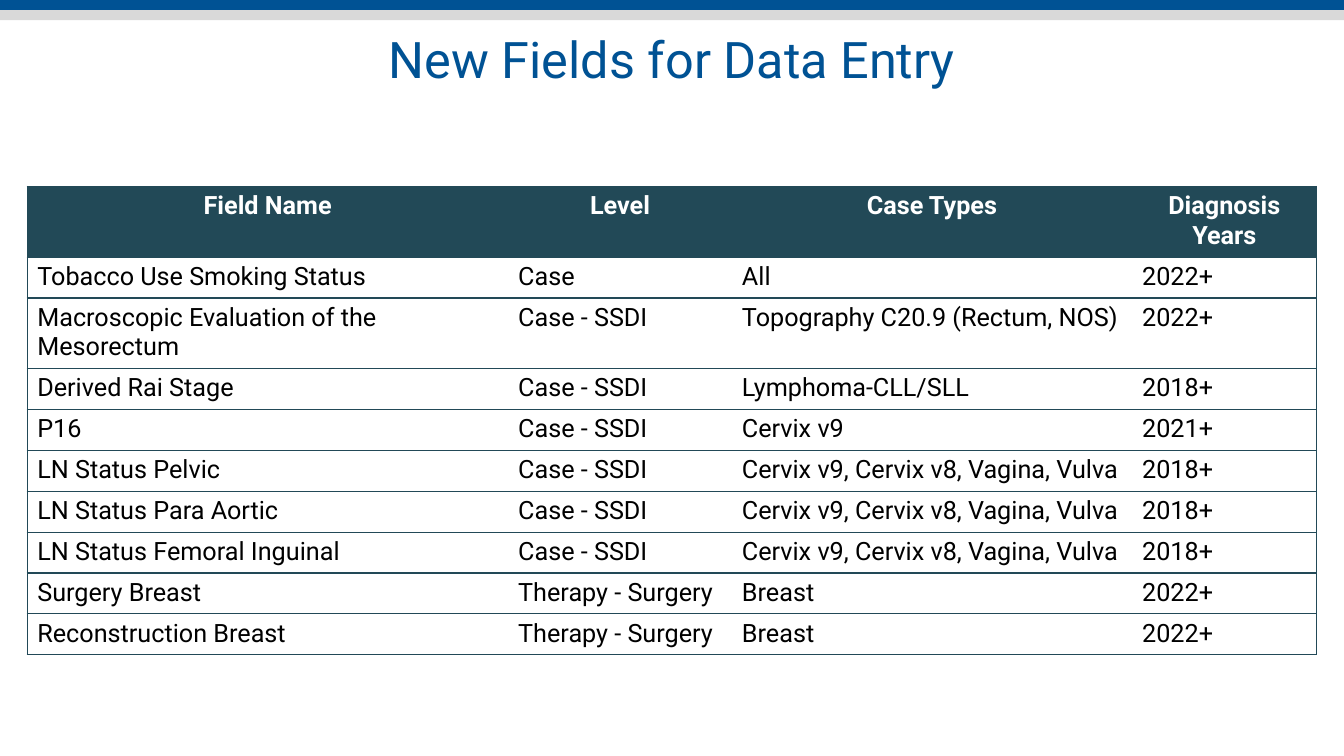
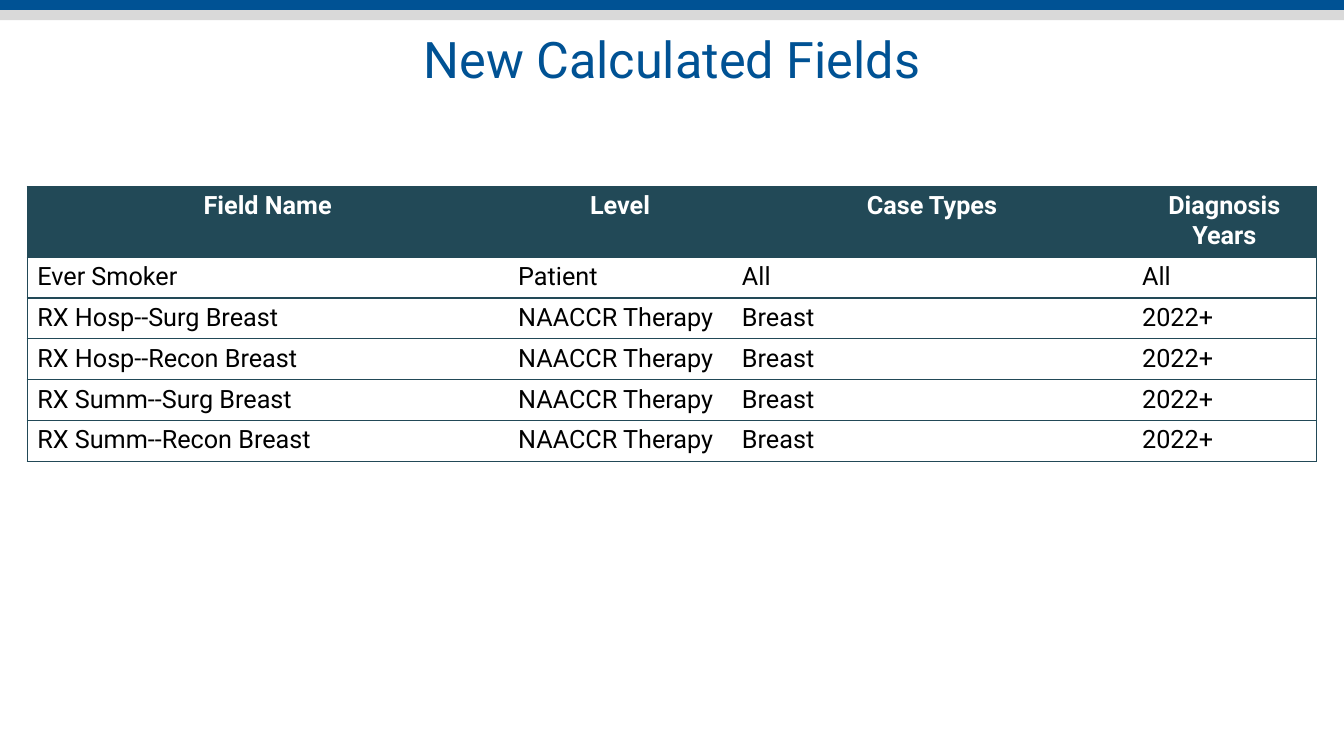
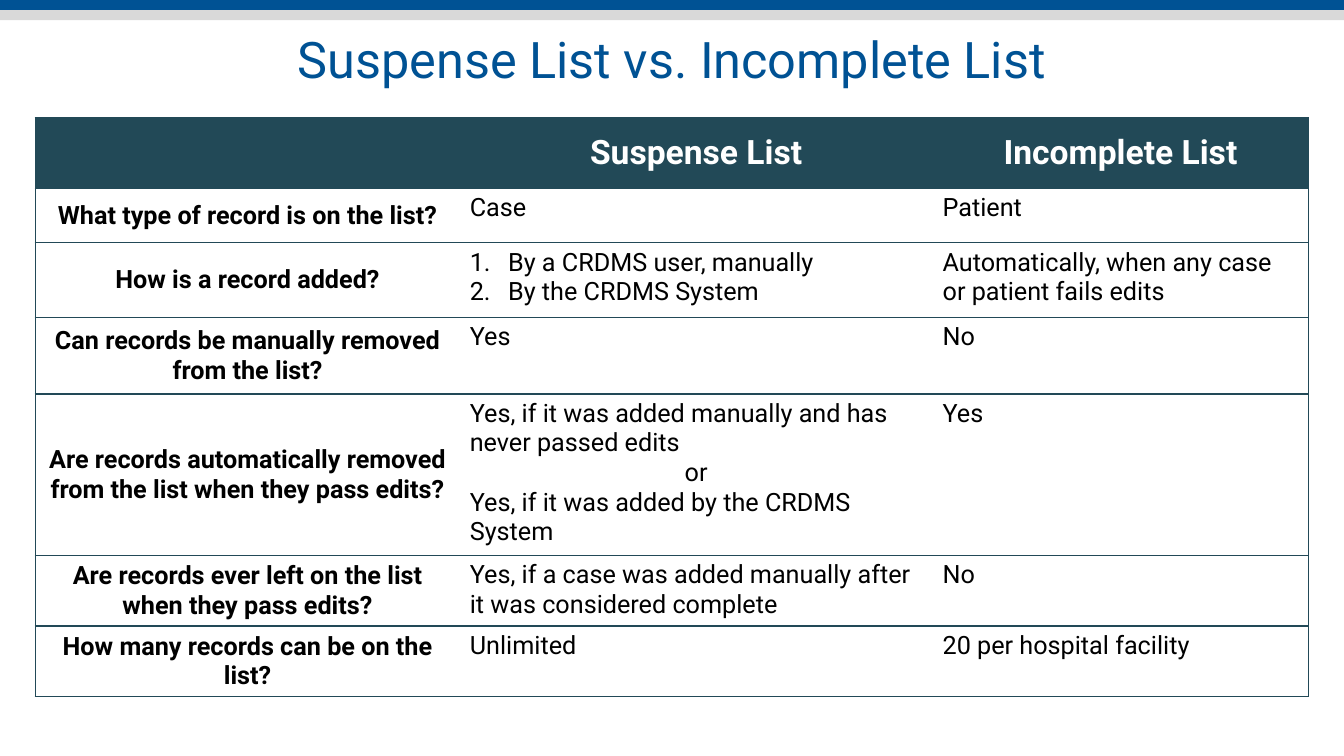
"""Build three slides of tables on new registry fields and record lists."""
import lxml.etree
import pptx
import pptx.dml.color
import pptx.enum.shapes
import pptx.enum.text
import pptx.oxml.ns
import pptx.util

COLORS = {
    "blue": "005294",
    "grey": "D9D9D9",
    "teal": "224957",
    "white": "FFFFFF",
    "black": "000000",
}
FONT = "Roboto"
CENTER = pptx.enum.text.PP_ALIGN.CENTER
LEFT = pptx.enum.text.PP_ALIGN.LEFT
TOP = pptx.enum.text.MSO_ANCHOR.TOP
MIDDLE = pptx.enum.text.MSO_ANCHOR.MIDDLE
qn = pptx.oxml.ns.qn


def write(paragraph, words, size, color, bold, align):
    paragraph.alignment = align
    run = paragraph.add_run()
    run.text = words
    run.font.name = FONT
    run.font.size = pptx.util.Pt(size)
    run.font.bold = bold
    run.font.color.rgb = pptx.dml.color.RGBColor.from_string(COLORS[color])


def rule_cell(cell, sides):
    properties = cell._tc.get_or_add_tcPr()
    for position, side in enumerate(("lnL", "lnR", "lnT", "lnB")):
        line = lxml.etree.Element(qn(f"a:{side}"), w=str(pptx.util.Pt(1)))
        if side in sides:
            fill = lxml.etree.SubElement(line, qn("a:solidFill"))
            lxml.etree.SubElement(fill, qn("a:srgbClr"), val=COLORS["teal"])
        else:
            lxml.etree.SubElement(line, qn("a:noFill"))
        properties.insert(position, line)


field_layout = {
    "left": 2.03,
    "top": 24.67,
    "columns": [35.78, 16.65, 29.78, 13.73],
    "header_size": 18,
    "header_anchor": TOP,
    "questions": False,
}
field_header = ["Field Name", "Level", "Case Types", "Diagnosis Years"]
one_line, two_lines = 5.41, 9.17
gynecologic = "Cervix v9, Cervix v8, Vagina, Vulva"

pages = [
    {
        **field_layout,
        "title": "New Fields for Data Entry",
        "heights": [two_lines, one_line, two_lines] + [one_line] * 7,
        "rows": [
            field_header,
            ["Tobacco Use Smoking Status", "Case", "All", "2022+"],
            ["Macroscopic Evaluation of the Mesorectum", "Case - SSDI",
             "Topography C20.9 (Rectum, NOS)", "2022+"],
            ["Derived Rai Stage", "Case - SSDI", "Lymphoma-CLL/SLL", "2018+"],
            ["P16", "Case - SSDI", "Cervix v9", "2021+"],
            ["LN Status Pelvic", "Case - SSDI", gynecologic, "2018+"],
            ["LN Status Para Aortic", "Case - SSDI", gynecologic, "2018+"],
            ["LN Status Femoral Inguinal", "Case - SSDI", gynecologic, "2018+"],
            ["Surgery Breast", "Therapy - Surgery", "Breast", "2022+"],
            ["Reconstruction Breast", "Therapy - Surgery", "Breast", "2022+"],
        ],
    },
    {
        **field_layout,
        "title": "New Calculated Fields",
        "heights": [two_lines] + [one_line] * 5,
        "rows": [
            field_header,
            ["Ever Smoker", "Patient", "All", "All"],
            ["RX Hosp--Surg Breast", "NAACCR Therapy", "Breast", "2022+"],
            ["RX Hosp--Recon Breast", "NAACCR Therapy", "Breast", "2022+"],
            ["RX Summ--Surg Breast", "NAACCR Therapy", "Breast", "2022+"],
            ["RX Summ--Recon Breast", "NAACCR Therapy", "Breast", "2022+"],
        ],
    },
    {
        "title": "Suspense List vs. Incomplete List",
        "left": 2.63,
        "top": 15.6,
        "columns": [31.58, 35.18, 27.98],
        "header_size": 24,
        "header_anchor": MIDDLE,
        "questions": True,
        "heights": [9.33, 7.2, 9.87, 10.13, 20.93, two_lines, two_lines],
        "rows": [
            ["", "Suspense List", "Incomplete List"],
            ["What type of record is on the list?", "Case", "Patient"],
            ["How is a record added?",
             [("By a CRDMS user, manually", "numbered"),
              ("By the CRDMS System", "numbered")],
             "Automatically, when any case or patient fails edits"],
            ["Can records be manually removed from the list?", "Yes", "No"],
            ["Are records automatically removed from the list when they pass edits?",
             [("Yes, if it was added manually and has never passed edits", "plain"),
              ("or", "centered"),
              ("Yes, if it was added by the CRDMS System", "plain")],
             "Yes"],
            ["Are records ever left on the list when they pass edits?",
             "Yes, if a case was added manually after it was considered complete",
             "No"],
            ["How many records can be on the list?", "Unlimited",
             "20 per hospital facility"],
        ],
    },
]

deck = pptx.Presentation()
deck.slide_width = pptx.util.Inches(13.33)
deck.slide_height = pptx.util.Inches(7.5)
across = deck.slide_width / 100
down = deck.slide_height / 100
band_height = int(1.33 * down)
number_indent = pptx.util.Inches(0.38)

for page in pages:
    slide = deck.slides.add_slide(deck.slide_layouts[6])

    for order, band_color in enumerate(("blue", "grey")):
        band = slide.shapes.add_shape(
            pptx.enum.shapes.MSO_SHAPE.RECTANGLE,
            0, order * band_height, deck.slide_width, band_height)
        band.shadow.inherit = False
        band.fill.solid()
        band.fill.fore_color.rgb = pptx.dml.color.RGBColor.from_string(COLORS[band_color])
        band.line.fill.background()

    title = slide.shapes.add_textbox(
        0, int(2.53 * down), deck.slide_width, int(16.27 * down)).text_frame
    title.word_wrap = True
    title.vertical_anchor = TOP
    title.margin_top = pptx.util.Inches(0.09)
    write(title.paragraphs[0], page["title"], 36, "blue", False, CENTER)

    rows, columns, heights = page["rows"], page["columns"], page["heights"]
    table = slide.shapes.add_table(
        len(rows), len(columns),
        int(page["left"] * across), int(page["top"] * down),
        int(sum(columns) * across), int(sum(heights) * down)).table
    table.horz_banding = False
    for column, share in zip(table.columns, columns):
        column.width = int(share * across)
    for row, share in zip(table.rows, heights):
        row.height = int(share * down)

    for r, entries in enumerate(rows):
        for c, entry in enumerate(entries):
            cell = table.cell(r, c)
            header = r == 0
            question = page["questions"] and c == 0
            cell.fill.solid()
            cell.fill.fore_color.rgb = pptx.dml.color.RGBColor.from_string(
                COLORS["teal" if header else "white"])
            sides = {"lnT", "lnB"}
            if c == 0:
                sides.add("lnL")
            if c == len(columns) - 1:
                sides.add("lnR")
            rule_cell(cell, sides)
            if header:
                cell.vertical_anchor = page["header_anchor"]
            else:
                cell.vertical_anchor = MIDDLE if question else TOP
            if not entry:
                continue

            answers = [(entry, "plain")] if isinstance(entry, str) else entry
            for position, (words, style) in enumerate(answers):
                frame = cell.text_frame
                paragraph = frame.add_paragraph() if position else frame.paragraphs[0]
                centered = header or question or style == "centered"
                write(paragraph, words, page["header_size"] if header else 18,
                      "white" if header else "black", header or question,
                      CENTER if centered else LEFT)
                if style == "numbered":
                    properties = paragraph._p.get_or_add_pPr()
                    properties.set("marL", str(number_indent))
                    properties.set("indent", str(-number_indent))
                    lxml.etree.SubElement(properties, qn("a:buFont"), typeface="+mj-lt")
                    lxml.etree.SubElement(
                        properties, qn("a:buAutoNum"), type="arabicPeriod")

deck.save("out.pptx")
